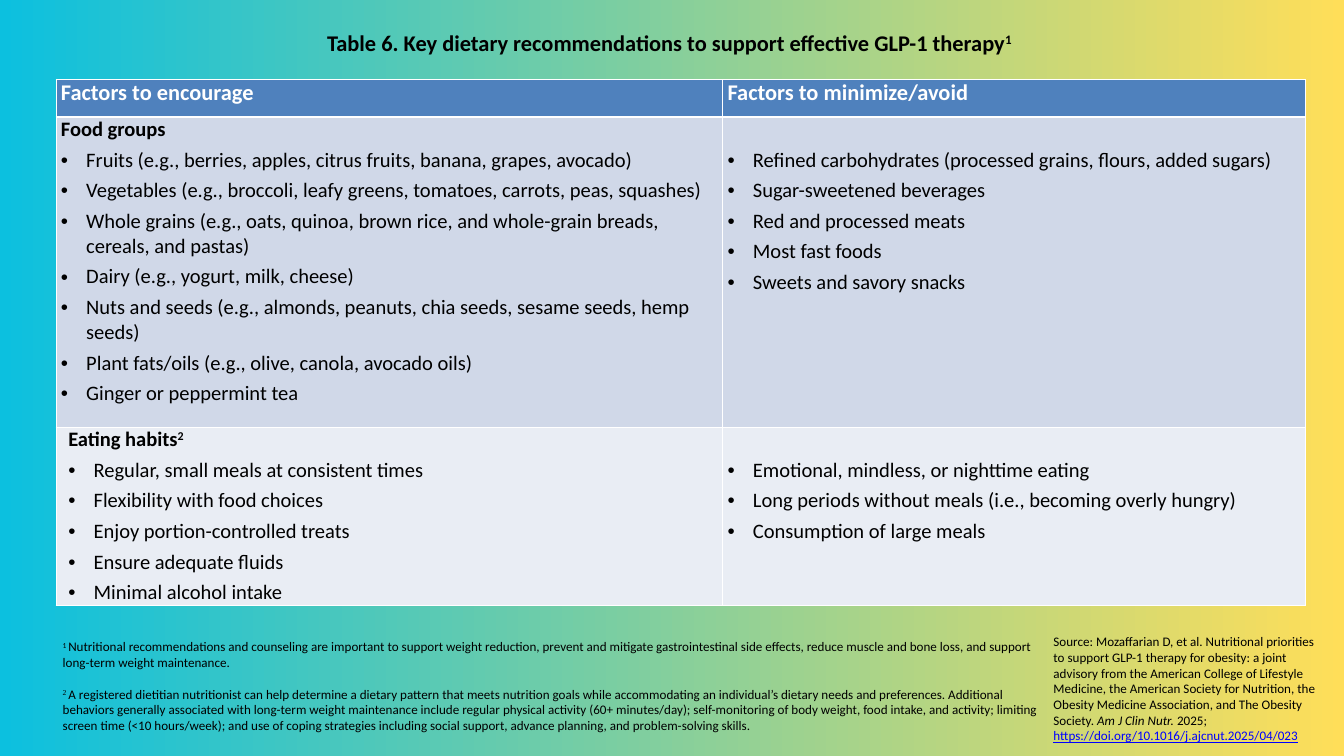
from lxml import etree
from pptx import Presentation
from pptx.dml.color import RGBColor
from pptx.enum.text import MSO_ANCHOR, MSO_AUTO_SIZE, PP_ALIGN
from pptx.oxml.ns import qn
from pptx.util import Cm, Pt

CENTER = PP_ALIGN.CENTER
TOP = MSO_ANCHOR.TOP
NO_FIT = MSO_AUTO_SIZE.NONE

BLACK = RGBColor(0x00, 0x00, 0x00)
WHITE = RGBColor(0xFF, 0xFF, 0xFF)
LINK = RGBColor(0x00, 0x00, 0xFF)
AQUA = RGBColor(0x0C, 0xC0, 0xDF)
YELLOW = RGBColor(0xFF, 0xDE, 0x59)
HEADER = RGBColor(0x4F, 0x81, 0xBD)
BAND_DARK = RGBColor(0xD0, 0xD8, 0xE8)
BAND_LIGHT = RGBColor(0xE9, 0xED, 0xF4)

FONT = "Calibri"
MARGIN_LEFT = Cm(2.12)
CELL_MARGIN = Cm(0.18)
LIST_TOP = Cm(1.15)
HANGING = Cm(0.96)
EATING_INDENT = Cm(0.28)
COLUMNS = (Cm(25.2), Cm(22.02))
ROWS = (Cm(1.43), Cm(11.72), Cm(6.65))

HEADINGS = ("Factors to encourage", "Factors to minimize/avoid")
FOODS_ENCOURAGED = (
    "Fruits (e.g., berries, apples, citrus fruits, banana, grapes, avocado)",
    "Vegetables (e.g., broccoli, leafy greens, tomatoes, carrots, peas, squashes)",
    "Whole grains (e.g., oats, quinoa, brown rice, and whole-grain breads, cereals, and pastas)",
    "Dairy (e.g., yogurt, milk, cheese)",
    "Nuts and seeds (e.g., almonds, peanuts, chia seeds, sesame seeds, hemp seeds)",
    "Plant fats/oils (e.g., olive, canola, avocado oils)",
    "Ginger or peppermint tea",
)
FOODS_AVOIDED = (
    "Refined carbohydrates (processed grains, flours, added sugars)",
    "Sugar-sweetened beverages",
    "Red and processed meats",
    "Most fast foods",
    "Sweets and savory snacks",
)
HABITS_ENCOURAGED = (
    "Regular, small meals at consistent times",
    "Flexibility with food choices",
    "Enjoy portion-controlled treats",
    "Ensure adequate fluids",
    "Minimal alcohol intake",
)
HABITS_AVOIDED = (
    "Emotional, mindless, or nighttime eating",
    "Long periods without meals (i.e., becoming overly hungry)",
    "Consumption of large meals",
)
FOOTNOTES = (
    ("1 ", FONT,
     "Nutritional recommendations and counseling are important to support weight reduction, "
     "prevent and mitigate gastrointestinal side effects, reduce muscle and bone loss, and "
     "support long-term weight maintenance."),
    ("2 ", "Times New Roman",
     "A registered dietitian nutritionist can help determine a dietary pattern that meets "
     "nutrition goals while accommodating an individual’s dietary needs and preferences. "
     "Additional behaviors generally associated with long-term weight maintenance include "
     "regular physical activity (60+ minutes/day); self-monitoring of body weight, food intake, "
     "and activity; limiting screen time (<10 hours/week); and use of coping strategies "
     "including social support, advance planning, and problem-solving skills."),
)
CITATION = (
    "Source: Mozaffarian D, et al. Nutritional priorities to support GLP-1 therapy for obesity: "
    "a joint advisory from the American College of Lifestyle Medicine, the American Society for "
    "Nutrition, the Obesity Medicine Association, and The Obesity Society. "
)


def add_text(p, text, size=22, color=BLACK, font=FONT, bold=False,
             italic=False, underline=False, superscript=False):
    r = p.add_run()
    r.text = text
    f = r.font
    f.name, f.size, f.bold = font, Pt(size), bold
    f.italic, f.underline = italic, underline
    f.color.rgb = color
    if superscript:
        r._r.get_or_add_rPr().set("baseline", "30000")


def next_paragraph(tf):
    first = tf.paragraphs[0]
    return tf.add_paragraph() if first.runs else first


def set_indent(p, left, first_line=0):
    pPr = p._p.get_or_add_pPr()
    pPr.set("marL", str(left))
    pPr.set("indent", str(first_line))
    return pPr


def add_bullets(tf, items, left=0):
    for item in items:
        p = next_paragraph(tf)
        p.space_before = Pt(6)
        pPr = set_indent(p, left + HANGING, -HANGING)
        etree.SubElement(pPr, qn("a:buFont"), typeface="Arial")
        etree.SubElement(pPr, qn("a:buChar"), char="•")
        add_text(p, item)


def set_borders(cell, bottom=1):
    tcPr = cell._tc.get_or_add_tcPr()
    for side, width in (("L", 1), ("R", 1), ("T", 1), ("B", bottom)):
        ln = etree.SubElement(tcPr, qn(f"a:ln{side}"), w=str(Pt(width)))
        fill = etree.SubElement(ln, qn("a:solidFill"))
        etree.SubElement(fill, qn("a:srgbClr"), val=str(WHITE))


def format_cell(cell, color, bottom=1, top=0):
    cell.margin_left = cell.margin_right = CELL_MARGIN
    cell.margin_top, cell.margin_bottom = top, 0
    set_borders(cell, bottom)
    cell.fill.solid()
    cell.fill.fore_color.rgb = color
    return cell.text_frame


def add_group(table, row, color, heading, note, encouraged, avoided, left=0):
    tf = format_cell(table.cell(row, 0), color)
    p = tf.paragraphs[0]
    set_indent(p, left)
    add_text(p, heading, bold=True)
    if note:
        add_text(p, note, bold=True, superscript=True)
    add_bullets(tf, encouraged, left)
    add_bullets(format_cell(table.cell(row, 1), color, top=LIST_TOP), avoided)


def add_recommendations(s):
    table = s.shapes.add_table(len(ROWS), len(COLUMNS), MARGIN_LEFT, Cm(3),
                               sum(COLUMNS), sum(ROWS)).table
    for column, width in zip(table.columns, COLUMNS):
        column.width = width
    for row, height in zip(table.rows, ROWS):
        row.height = height
    for i, heading in enumerate(HEADINGS):
        tf = format_cell(table.cell(0, i), HEADER, bottom=3)
        add_text(tf.paragraphs[0], heading, size=24, color=WHITE, bold=True)
    add_group(table, 1, BAND_DARK, "Food groups", "", FOODS_ENCOURAGED, FOODS_AVOIDED)
    add_group(table, 2, BAND_LIGHT, "Eating habits", "2", HABITS_ENCOURAGED,
              HABITS_AVOIDED, EATING_INDENT)


def add_title(s):
    sp = s.shapes.title
    sp.left, sp.top, sp.width, sp.height = MARGIN_LEFT, Cm(0.97), Cm(46.36), Cm(2.31)
    tf = sp.text_frame
    tf.auto_size, tf.vertical_anchor = NO_FIT, TOP
    p = tf.paragraphs[0]
    p.alignment = CENTER
    add_text(p, "Table 6. Key dietary recommendations to support effective GLP-1 therapy",
             size=24, bold=True)
    add_text(p, "1", size=24, bold=True, superscript=True)


def add_text_box(s, left, top, width, height):
    tf = s.shapes.add_textbox(left, top, width, height).text_frame
    tf.word_wrap = True
    return tf


def add_footnotes(s):
    tf = add_text_box(s, MARGIN_LEFT, Cm(24.03), Cm(37.85), Cm(4.4))
    for i, (mark, font, note) in enumerate(FOOTNOTES):
        p = next_paragraph(tf)
        p.space_before = Pt(17 * i)
        add_text(p, mark, size=14, font=font, superscript=True)
        add_text(p, note, size=14)


def add_source(s):
    p = add_text_box(s, Cm(39.57), Cm(23.83), Cm(10.87), Cm(4.45)).paragraphs[0]
    add_text(p, CITATION, size=14)
    add_text(p, "Am J Clin Nutr. ", size=14, italic=True)
    add_text(p, "2025; ", size=14)
    add_text(p, "https://doi.org/10.1016/j.ajcnut.2025/04/023", size=14,
             color=LINK, underline=True)


def set_background(s):
    fill = s.background.fill
    fill.gradient()
    fill.gradient_angle = 0
    for stop, position, color in zip(fill.gradient_stops, (0, 1), (AQUA, YELLOW)):
        stop.position = position
        stop.color.rgb = color


def main():
    prs = Presentation()
    prs.slide_width, prs.slide_height = Cm(50.8), Cm(28.58)
    s = prs.slides.add_slide(prs.slide_layouts.get_by_name("Title Only"))
    set_background(s)
    add_title(s)
    add_recommendations(s)
    add_footnotes(s)
    add_source(s)
    prs.save("out.pptx")


if __name__ == "__main__":
    main()
